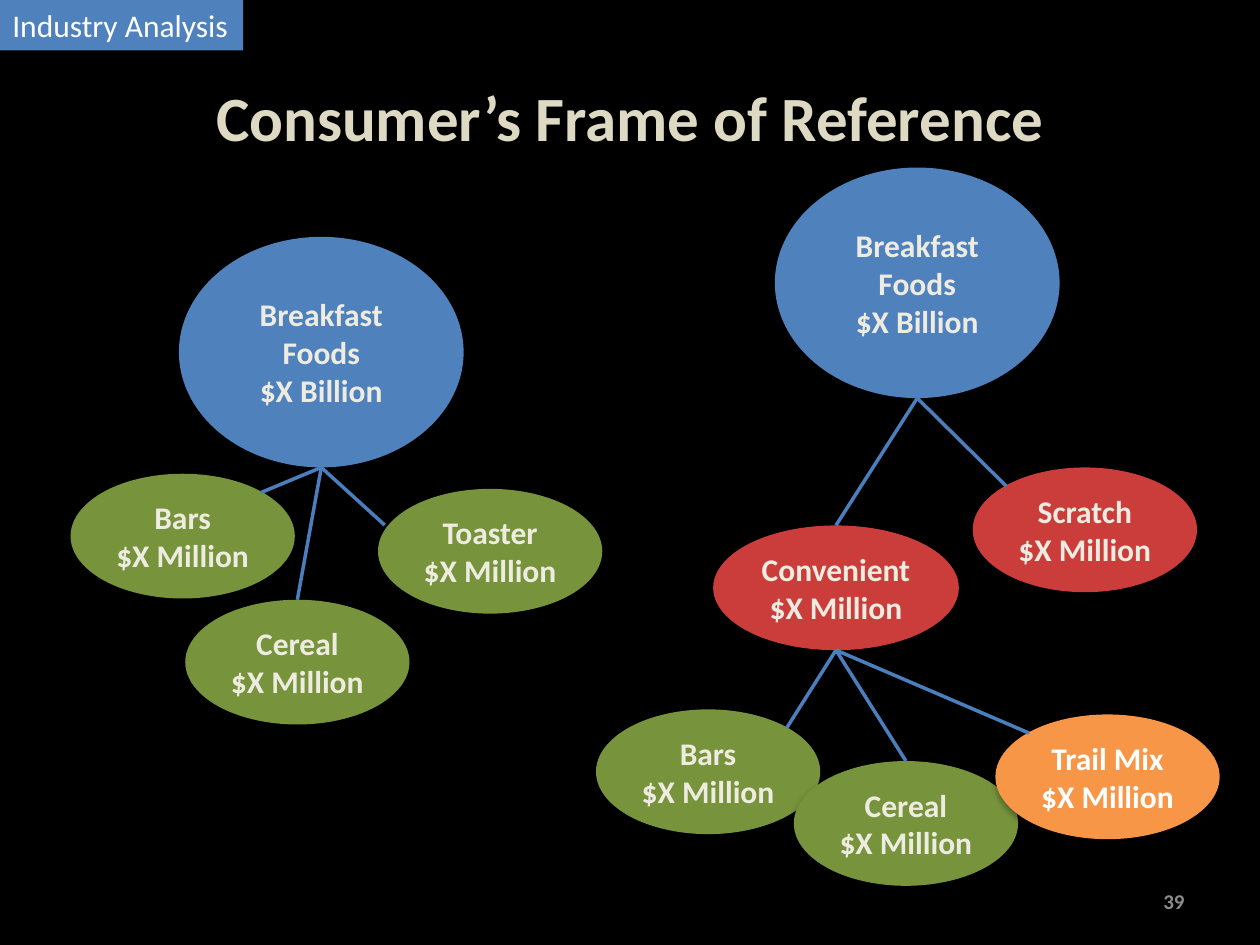
from dataclasses import dataclass
from lxml import etree
from pptx import Presentation
from pptx.dml.color import RGBColor
from pptx.enum.shapes import MSO_CONNECTOR, MSO_SHAPE
from pptx.enum.text import MSO_ANCHOR, PP_ALIGN
from pptx.oxml import parse_xml
from pptx.oxml.ns import nsdecls, qn
from pptx.util import Inches, Pt

OVAL, RECT = MSO_SHAPE.OVAL, MSO_SHAPE.RECTANGLE
LINE = MSO_CONNECTOR.STRAIGHT
MIDDLE = MSO_ANCHOR.MIDDLE
LEFT, CENTER, RIGHT = PP_ALIGN.LEFT, PP_ALIGN.CENTER, PP_ALIGN.RIGHT


@dataclass(frozen=True)
class Theme:
    font: str = "Calibri"
    back: str = "000000"
    title: str = "DDD9C3"
    cream: str = "EEECE1"
    white: str = "FFFFFF"
    gray: str = "8C8C8C"
    blue: str = "4F81BD"
    green: str = "77933C"
    red: str = "CB3D3A"
    orange: str = "F79646"
    link: str = "4B7EBC"
    head: int = 36
    body: int = 18
    small: int = 12


T = Theme()
BIG = (2.26, 1.83)
MID = (1.78, 0.99)
WIDE = (1.95, 0.99)

# Where a link meets its child, as fractions of the child's box
TOP, TOP_LEFT, TOP_RIGHT = (0.5, 0), (0.15, 0.15), (0.85, 0.15)
SIDE = (0.03, 0.29)

SHADOW = (
    f'<a:effectLst {nsdecls("a")}>'
    '<a:outerShdw blurRad="44450" dist="27940" dir="5400000" algn="ctr" rotWithShape="0">'
    '<a:srgbClr val="000000"><a:alpha val="32000"/></a:srgbClr>'
    '</a:outerShdw></a:effectLst>'
)


def rgb(code):
    return RGBColor.from_string(code)


def write(shape, text, size, color, bold=True, align=CENTER, wrap=True):
    frame = shape.text_frame
    frame.text = text
    frame.word_wrap = wrap
    frame.vertical_anchor = MIDDLE
    for para in frame.paragraphs:
        para.alignment = align
        for run in para.runs:
            font = run.font
            font.name, font.size, font.bold = T.font, Pt(size), bold
            font.color.rgb = rgb(color)


def label(slide, box, text, size, color, align):
    shape = slide.shapes.add_textbox(*map(Inches, box))
    write(shape, text, size, color, align=align)


def block(slide, kind, box, fill):
    shape = slide.shapes.add_shape(kind, *map(Inches, box))
    shape.shadow.inherit = False
    shape.fill.solid()
    shape.fill.fore_color.rgb = rgb(fill)
    shape.line.fill.background()
    return shape


def bubble(slide, box, text, fill):
    shape = block(slide, OVAL, box, fill)
    props = shape.element.spPr
    props.replace(props.find(qn("a:effectLst")), parse_xml(SHADOW))
    color = T.white if fill == T.orange else T.cream
    write(shape, text, T.body, color, wrap=box[2:] == BIG)


def link(slide, upper, lower, spot):
    x, y, w, h = upper
    left, top, wide, high = lower
    ends = (x + w / 2, y + h, left + wide * spot[0], top + high * spot[1])
    line = slide.shapes.add_connector(LINE, *map(Inches, ends))
    line.line.color.rgb = rgb(T.link)
    line.line.width = Pt(2)
    etree.SubElement(line.element.spPr, qn("a:effectLst"))


def tree(slide, left, top, nodes, links):
    """Draw bubbles at offsets from (left, top), then join them by name."""
    boxes = {}
    for name, x, y, size, fill in nodes:
        boxes[name] = (left + x, top + y, *size)
        unit = "Billion" if size == BIG else "Million"
        bubble(slide, boxes[name], f"{name}\n$X {unit}", fill)
    for upper, lower, spot in links:
        link(slide, boxes[upper], boxes[lower], spot)


def header(slide, left, top):
    # Section tag and title
    tag = block(slide, RECT, (left, top, 1.93, 0.4), T.blue)
    write(tag, "Industry Analysis", T.body, T.white, False, LEFT, False)
    label(slide, (left + 0.5, top + 0.3, 9, 1.25),
          "Consumer’s Frame of Reference", T.head, T.title, CENTER)


def main():
    deck = Presentation()
    deck.slide_width, deck.slide_height = Inches(10), Inches(7.5)
    slide = deck.slides.add_slide(deck.slide_layouts[6])
    slide.background.fill.solid()
    slide.background.fill.fore_color.rgb = rgb(T.back)

    header(slide, 0, 0)
    root = "Breakfast Foods"

    # Flat view of the market
    tree(slide, 0.56, 1.88, [
        (root, 0.86, 0, BIG, T.blue),
        ("Bars", 0, 1.88, MID, T.green),
        ("Cereal", 0.91, 2.88, MID, T.green),
        ("Toaster", 2.44, 2, MID, T.green),
    ], [
        (root, "Cereal", TOP),
        (root, "Bars", TOP_RIGHT),
        (root, "Toaster", SIDE),
    ])

    # View with a level for convenience
    tree(slide, 4.73, 1.33, [
        (root, 1.42, 0, BIG, T.blue),
        ("Convenient", 0.93, 2.84, WIDE, T.red),
        ("Scratch", 2.99, 2.38, MID, T.red),
        ("Bars", 0, 4.3, MID, T.green),
        ("Cereal", 1.57, 4.71, MID, T.green),
        ("Trail Mix", 3.17, 4.34, MID, T.orange),
    ], [
        (root, "Convenient", TOP),
        (root, "Scratch", TOP_LEFT),
        ("Convenient", "Bars", TOP_RIGHT),
        ("Convenient", "Cereal", TOP),
        ("Convenient", "Trail Mix", TOP_LEFT),
    ])

    # Page number
    label(slide, (7.17, 6.95, 2.33, 0.4), "39", T.small, T.gray, RIGHT)
    deck.save("out.pptx")


if __name__ == "__main__":
    main()
